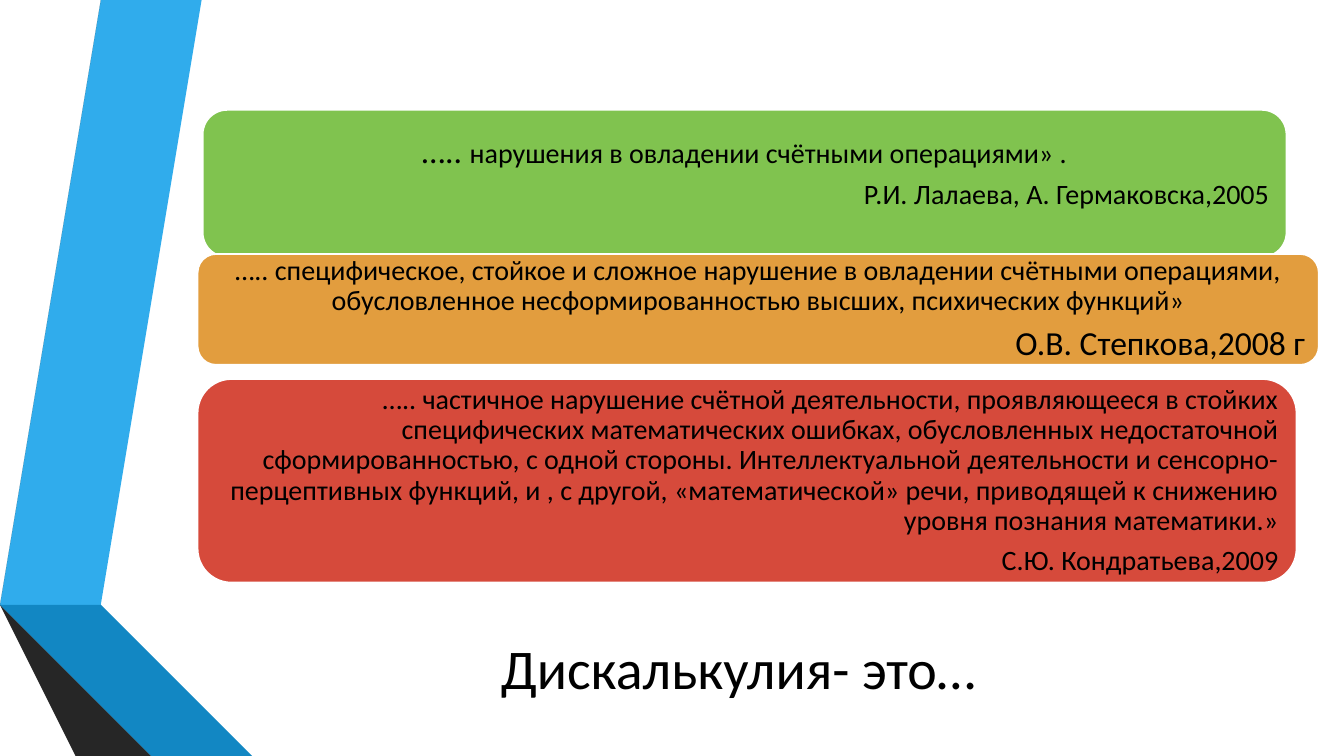
from dataclasses import dataclass
from typing import Any, NamedTuple

from pptx import Presentation
from pptx import util as u
from pptx.dml.color import RGBColor
from pptx.enum import shapes, text


@dataclass(frozen=True)
class Theme:
    font: str = "Calibri"
    ink: str = "000000"
    border: str = "FFFFFF"
    blue: str = "30ACEC"
    blue_fold: str = "1287C3"
    blue_edge: str = "0C5A82"
    grey: str = "595959"
    grey_fold: str = "404040"
    grey_edge: str = "262626"
    green: str = "80C34F"
    orange: str = "E29D3E"
    red: str = "D64A3B"
    title: int = 40
    large: int = 24
    body: int = 20


T = Theme()
CENTER, RIGHT = text.PP_ALIGN.CENTER, text.PP_ALIGN.RIGHT


class Band(NamedTuple):
    color: str
    points: list[tuple[float, float]]


class Run(NamedTuple):
    words: str
    size: int = T.body


class Para(NamedTuple):
    align: Any
    runs: list[Run]


class Card(NamedTuple):
    box: tuple[float, float, float, float]
    color: str
    insets: tuple[float, float, float, float]  # left, top, right, bottom
    paras: list[Para]


# Folded ribbons on the left edge
BANDS = [
    Band(T.blue, [(0.5, 5.78), (0.77, 5.83), (1.73, 0), (1.45, 0)]),
    Band(T.grey, [(1.39, 0), (1.11, 0), (0.16, 5.73), (0.44, 5.77)]),
    Band(T.grey_edge, [(0.16, 5.73), (1.45, 7.5), (1.51, 7.5)]),
    Band(T.blue_edge, [(0.5, 5.79), (2.08, 7.5), (2.14, 7.5)]),
    Band(T.blue_fold, [(0.5, 5.78), (2.14, 7.5), (2.83, 7.5), (0.77, 5.83)]),
    Band(T.grey_fold, [(2.02, 7.5), (0.48, 5.83), (0.44, 5.77), (0.16, 5.73), (1.51, 7.5)]),
]

# Definitions, each with its author
TIGHT = (0.08, 0.04, 0.08, 0.04)
CARDS = [
    Card((2.01, 1.09, 10.75, 1.46), T.green, (0.1, 0.05, 0.1, 0.27), [
        Para(CENTER, [Run("….. ", T.large),
                      Run("нарушения в овладении счётными операциями» .")]),
        Para(RIGHT, [Run("Р.И. Лалаева, А. Гермаковска,2005")]),
    ]),
    Card((1.96, 2.52, 11.12, 1.1), T.orange, TIGHT, [
        Para(CENTER, [Run("….. специфическое, стойкое и сложное нарушение в овладении счётными "
                          "операциями, обусловленное несформированностью высших, "
                          "психических функций»")]),
        Para(RIGHT, [Run("О.В. Степкова,2008 г", T.large)]),
    ]),
    Card((1.96, 3.76, 10.9, 2.02), T.red, TIGHT, [
        Para(RIGHT, [Run("….. частичное нарушение счётной деятельности, проявляющееся в стойких "
                         "специфических математических ошибках, обусловленных недостаточной "
                         "сформированностью, с одной стороны. Интеллектуальной деятельности и "
                         "сенсорно-перцептивных функций, и , с другой, «математической» речи, "
                         "приводящей к снижению уровня познания математики.»")]),
        Para(RIGHT, [Run("С.Ю. Кондратьева,2009")]),
    ]),
]


def apply(target: Any, formats: dict[str, Any]) -> None:
    for name, value in formats.items():
        setattr(target, name, value)


def paint(sp: Any, color: str) -> None:
    sp.shadow.inherit = False
    sp.fill.solid()
    sp.fill.fore_color.rgb = RGBColor.from_string(color)


def write(tf: Any, paras: list[Para], insets: tuple[float, float, float, float],
          para_format: dict[str, Any]) -> None:
    sides = ("margin_left", "margin_top", "margin_right", "margin_bottom")
    apply(tf, {"word_wrap": True, "vertical_anchor": text.MSO_ANCHOR.MIDDLE,
               **{side: u.Inches(v) for side, v in zip(sides, insets)}})
    for i, para in enumerate(paras):
        p = tf.paragraphs[0] if i == 0 else tf.add_paragraph()
        apply(p, {"alignment": para.align, **para_format})
        for run in para.runs:
            r = p.add_run()
            r.text = run.words
            apply(r.font, {"name": T.font, "size": u.Pt(run.size)})
            r.font.color.rgb = RGBColor.from_string(T.ink)


def draw_band(s: Any, band: Band) -> None:
    start, *rest = band.points
    builder = s.shapes.build_freeform(*start, scale=u.Inches(1))
    builder.add_line_segments(rest, close=True)
    sp = builder.convert_to_shape()
    paint(sp, band.color)
    sp.line.fill.background()


def draw_card(s: Any, card: Card) -> None:
    sp = s.shapes.add_shape(shapes.MSO_SHAPE.ROUNDED_RECTANGLE, *map(u.Inches, card.box))
    paint(sp, card.color)
    sp.line.color.rgb = RGBColor.from_string(T.border)
    sp.line.width = u.Pt(1.25)
    write(sp.text_frame, card.paras, card.insets,
          {"line_spacing": 0.9, "space_after": u.Pt(7)})


def main() -> None:
    prs = Presentation()
    apply(prs, {"slide_width": u.Inches(13.33), "slide_height": u.Inches(7.5)})
    s = prs.slides.add_slide(prs.slide_layouts[6])
    for band in BANDS:
        draw_band(s, band)

    # Title below the cards
    title = s.shapes.add_textbox(*map(u.Inches, (2.06, 5.98, 10.65, 1.27)))
    write(title.text_frame, [Para(CENTER, [Run("Дискалькулия- это… ", T.title)])],
          (0.1, 0.05, 0.1, 0.05), {})

    for card in CARDS:
        draw_card(s, card)
    prs.save("out.pptx")


if __name__ == "__main__":
    main()
